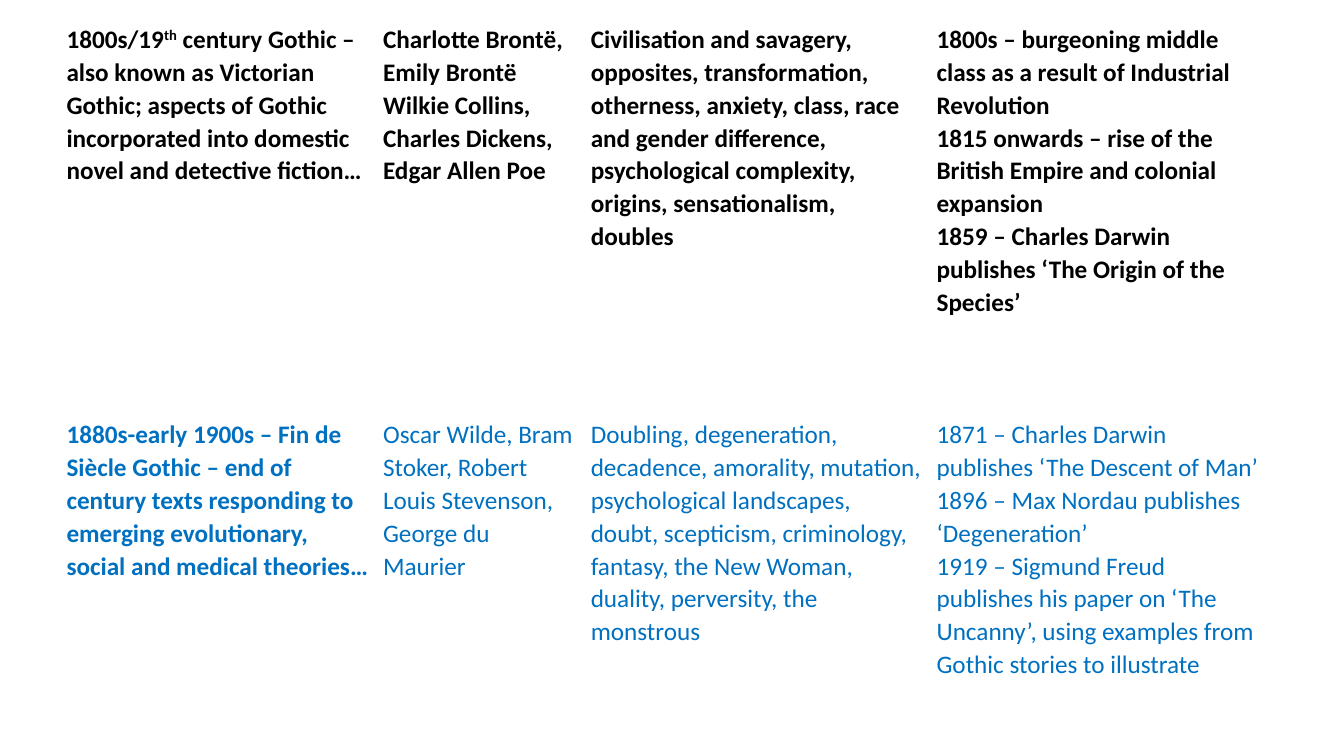
from pptx import Presentation
from pptx.dml.color import RGBColor
from pptx.util import Inches, Pt

COLORS = {"black": "000000", "blue": "0070C0", "white": "FFFFFF"}
INKS = ["black", "blue"]
WIDTHS = [3.14, 2.06, 3.43, 3.39]
HEIGHTS = [3.92, 3.38]
ROWS = [
    [
        "1800s/19^th^ century Gothic – also known as Victorian Gothic; aspects of Gothic "
        "incorporated into domestic novel and detective fiction…",
        "Charlotte Brontë, Emily Brontë Wilkie Collins, Charles Dickens, Edgar Allen Poe",
        "Civilisation and savagery, opposites, transformation, otherness, anxiety, class, "
        "race and gender difference, psychological complexity, origins, sensationalism, doubles",
        "1800s – burgeoning middle class as a result of Industrial Revolution\n"
        "1815 onwards – rise of the British Empire and colonial expansion\n"
        "1859 – Charles Darwin publishes ‘The Origin of the Species’",
    ],
    [
        "1880s-early 1900s – Fin de Siècle Gothic – end of century texts responding to "
        "emerging evolutionary, social and medical theories…",
        "Oscar Wilde, Bram Stoker, Robert Louis Stevenson, George du Maurier",
        "Doubling, degeneration, decadence, amorality, mutation, psychological landscapes, "
        "doubt, scepticism, criminology, fantasy, the New Woman, duality, perversity, "
        "the monstrous",
        "1871 – Charles Darwin publishes ‘The Descent of Man’\n"
        "1896 – Max Nordau publishes ‘Degeneration’\n"
        "1919 – Sigmund Freud publishes his paper on ‘The Uncanny’, using examples from "
        "Gothic stories to illustrate",
    ],
]


def color(name):
    """Return the named colour."""
    return RGBColor.from_string(COLORS[name])


def add_line(para, text, ink, bold):
    """Write one paragraph, raising the parts between carets."""
    para.line_spacing = 1.07
    for i, part in enumerate(text.split("^")):
        run = para.add_run()
        run.text = part
        font = run.font
        font.name, font.size, font.bold = "Calibri", Pt(18), bold
        font.color.rgb = color(ink)
        if i % 2:
            run._r.get_or_add_rPr().set("baseline", "30000")


def fill_cell(cell, text, ink, bold):
    """Set the fill, margins and text of a cell."""
    cell.fill.solid()
    cell.fill.fore_color.rgb = color("white")
    cell.margin_left = cell.margin_right = Inches(0.07)
    cell.margin_top = cell.margin_bottom = Inches(0)
    frame = cell.text_frame
    for i, line in enumerate(text.split("\n")):
        para = frame.add_paragraph() if i else frame.paragraphs[0]
        add_line(para, line, ink, bold)


def add_grid(slide):
    """Add the table of Gothic periods."""
    table = slide.shapes.add_table(
        len(ROWS), len(WIDTHS), Inches(0.59), Inches(0.22),
        Inches(sum(WIDTHS)), Inches(sum(HEIGHTS))).table
    for col, width in zip(table.columns, WIDTHS):
        col.width = Inches(width)
    for r, texts in enumerate(ROWS):
        table.rows[r].height = Inches(HEIGHTS[r])
        for c, text in enumerate(texts):
            fill_cell(table.cell(r, c), text, INKS[r], r == 0 or c == 0)


def main():
    """Build and save the slide."""
    deck = Presentation()
    deck.slide_width, deck.slide_height = Inches(13.33), Inches(7.5)
    add_grid(deck.slides.add_slide(deck.slide_layouts[6]))
    deck.save("out.pptx")


if __name__ == "__main__":
    main()
